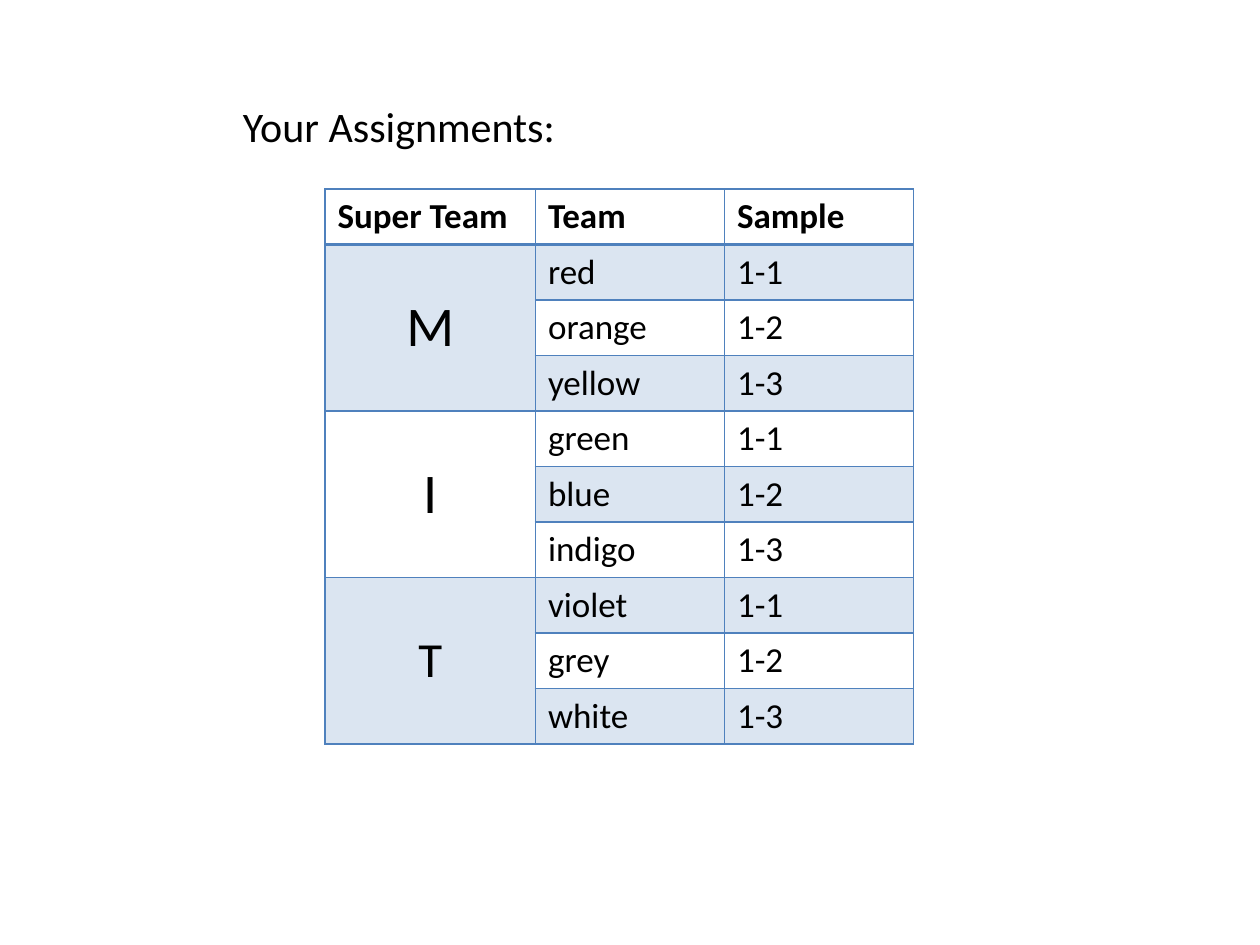
import pptx
import pptx.util
import pptx.dml.color
import pptx.enum.text
import pptx.oxml.ns
import lxml.etree as etree

WIDE, HIGH = 10, 7.5
FONT = "Calibri"
BLUE = "4F81BD"
BLACK = "000000"
COLS = [1.67, 1.5, 1.5]
ROW = 0.41
HEADS = ["Super Team", "Team", "Sample"]
GROUPS = [
    ("M", 32, ["red", "orange", "yellow"]),
    ("I", 32, ["green", "blue", "indigo"]),
    ("T", 28, ["violet", "grey", "white"]),
]
SIZE = 3  # teams in each super team


def inch(num):
    return pptx.util.Inches(num)


def paint(color, code):
    color.rgb = pptx.dml.color.RGBColor.from_string(code)


def sub(node, tag, **attrs):
    return etree.SubElement(node, pptx.oxml.ns.qn(tag), **attrs)


def write(frame, text, size, bold=False):
    run = frame.paragraphs[0].add_run()
    run.text = text
    run.font.name = FONT
    run.font.size = pptx.util.Pt(size)
    run.font.bold = bold
    paint(run.font.color, BLACK)


def edge(cell, side, width):
    line = sub(cell._tc.get_or_add_tcPr(), "a:ln" + side,
               w=str(pptx.util.Pt(width)))
    fill = sub(line, "a:solidFill")
    sub(fill, "a:srgbClr", val=BLUE)


def style(cell, row):
    """Draw the borders, and tint every odd row."""
    for side in "LRTB":
        heavy = (row, side) in ((0, "B"), (1, "T"))
        edge(cell, side, 2 if heavy else 1)
    if row % 2:
        cell.fill.solid()
        paint(cell.fill.fore_color, BLUE)
        tint = cell._tc.tcPr.find(".//" + pptx.oxml.ns.qn("a:solidFill")
                                  + "[last()]")
        tint = cell._tc.tcPr.findall(pptx.oxml.ns.qn("a:solidFill"))[0]
        sub(tint[0], "a:alpha", val="20000")
    else:
        cell.fill.background()


def label(slide, text):
    box = slide.shapes.add_textbox(inch(1.83), inch(HIGH / 10),
                                   inch(2.7), inch(0.5))
    frame = box.text_frame
    frame.word_wrap = False
    frame.auto_size = pptx.enum.text.MSO_AUTO_SIZE.SHAPE_TO_FIT_TEXT
    write(frame, text, 24)


def grid(slide):
    rows = 1 + SIZE * len(GROUPS)
    table = slide.shapes.add_table(
        rows, len(COLS), inch(2.58), inch(HIGH / 5),
        inch(sum(COLS)), inch(ROW * rows)).table
    table.first_row = table.horz_banding = False
    for col, width in zip(table.columns, COLS):
        col.width = inch(width)
    for row in range(rows):
        table.rows[row].height = inch(ROW)
        for col in range(len(COLS)):
            style(table.cell(row, col), row)
    return table


def fill(table):
    for col, head in enumerate(HEADS):
        write(table.cell(0, col).text_frame, head, 20, True)
    for idx, (name, size, teams) in enumerate(GROUPS):
        top = 1 + idx * SIZE
        lead = table.cell(top, 0)
        lead.merge(table.cell(top + SIZE - 1, 0))
        lead.vertical_anchor = pptx.enum.text.MSO_ANCHOR.MIDDLE
        write(lead.text_frame, name, size)
        lead.text_frame.paragraphs[0].alignment = (
            pptx.enum.text.PP_ALIGN.CENTER)
        for num, team in enumerate(teams):
            write(table.cell(top + num, 1).text_frame, team, 20)
            write(table.cell(top + num, 2).text_frame, f"1-{num + 1}", 20)


def main():
    deck = pptx.Presentation()
    deck.slide_width, deck.slide_height = inch(WIDE), inch(HIGH)
    slide = deck.slides.add_slide(deck.slide_layouts[6])
    fill(grid(slide))
    label(slide, "Your Assignments:")
    deck.save("out.pptx")


if __name__ == "__main__":
    main()
